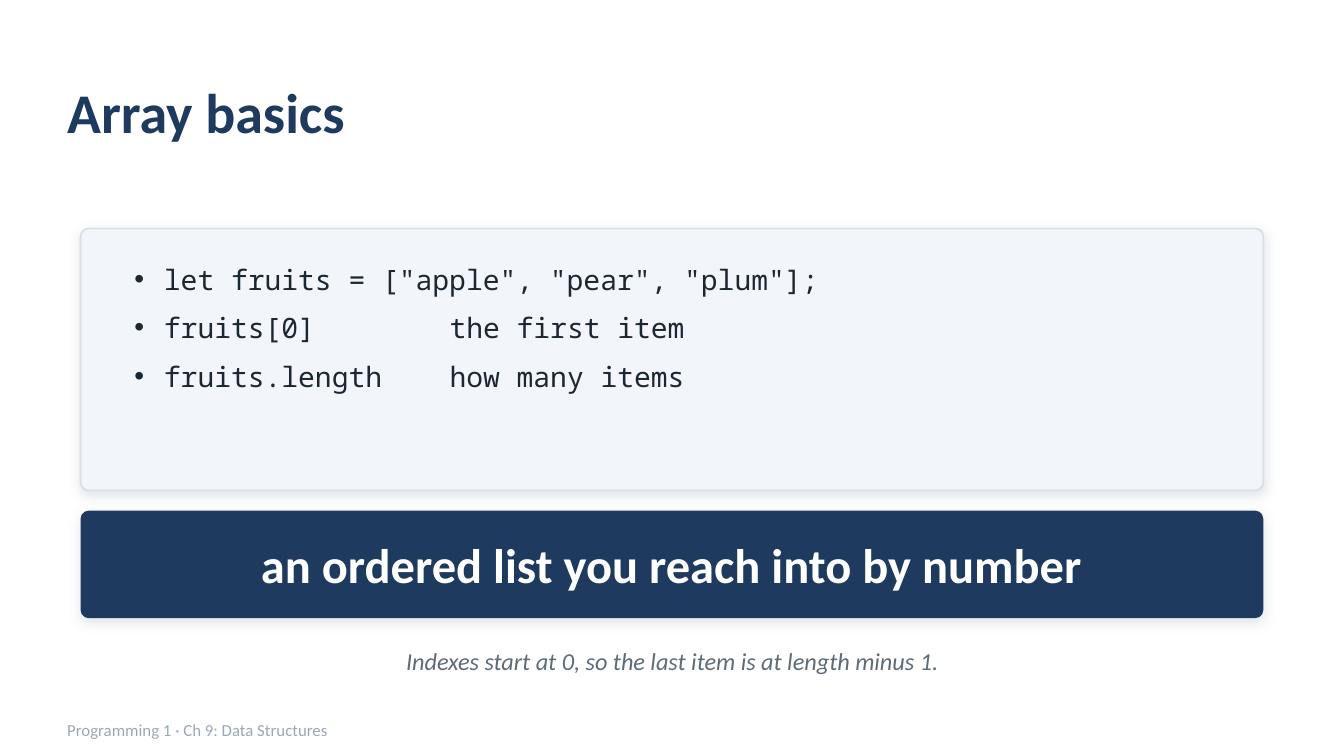
from lxml import etree
from pptx import Presentation
from pptx.dml.color import RGBColor
from pptx.enum.shapes import MSO_SHAPE
from pptx.enum.text import MSO_ANCHOR, MSO_AUTO_SIZE, PP_ALIGN
from pptx.oxml import parse_xml
from pptx.oxml.ns import nsdecls, qn
from pptx.util import Pt

ROUND_RECT = MSO_SHAPE.ROUNDED_RECTANGLE
LEFT, CENTER = PP_ALIGN.LEFT, PP_ALIGN.CENTER
TOP, MIDDLE = MSO_ANCHOR.TOP, MSO_ANCHOR.MIDDLE
NO_FIT = MSO_AUTO_SIZE.NONE

PX = 4572  # 200 px to the inch
COLORS = {
    "navy": "1F3A5F",
    "panel": "F2F5F9",
    "border": "D8E0E9",
    "code": "1B2733",
    "white": "FFFFFF",
    "note": "5E6B79",
    "muted": "9AA8B6",
}


def add_card(x, y, w, h, fill, radius):
    """Add a rounded card with a soft shadow below it."""
    sp = s.shapes.add_shape(ROUND_RECT, x * PX, y * PX, w * PX, h * PX)
    sp.adjustments[0] = radius / h
    sp.fill.solid()
    sp.fill.fore_color.rgb = RGBColor.from_string(COLORS[fill])
    sp.line.fill.background()
    sp.shadow.inherit = False
    sp._element.spPr.find(qn("a:effectLst")).append(parse_xml(
        f'<a:outerShdw {nsdecls("a")} blurRad="{Pt(6)}" dist="{Pt(2)}" '
        f'dir="5400000" algn="ctr" rotWithShape="0"><a:srgbClr val="{COLORS["muted"]}">'
        '<a:alpha val="28000"/></a:srgbClr></a:outerShdw>'))
    return sp


def set_text(sp, box, text, size, color, align=LEFT, font="Calibri", bold=False, italic=False):
    """Place a text shape and fill it with evenly formatted paragraphs."""
    sp.left, sp.top, sp.width, sp.height = [v * PX for v in box]
    tf = sp.text_frame
    tf.text = text
    tf.word_wrap = True
    tf.auto_size = NO_FIT
    tf.vertical_anchor = MIDDLE
    tf.margin_left = tf.margin_right = tf.margin_top = tf.margin_bottom = 0
    for p in tf.paragraphs:
        p.alignment = align
        p.space_before = Pt(0)
        for r in p.runs:
            r.font.name = font
            r.font.size = Pt(size)
            r.font.bold = bold
            r.font.italic = italic
            r.font.color.rgb = RGBColor.from_string(COLORS[color])
    return tf


prs = Presentation()
prs.slide_width, prs.slide_height = 2000 * PX, 1125 * PX
s = prs.slides.add_slide(prs.slide_layouts[1])
title, body = s.placeholders

# Cards go behind the placeholders
panel = add_card(120, 340, 1760, 390, "panel", radius=12)
panel.line.color.rgb = RGBColor.from_string(COLORS["border"])
panel.line.width = Pt(1)
banner = add_card(120, 760, 1760, 160, "navy", radius=12)
for i, card in enumerate((panel, banner)):
    s.shapes._spTree.insert(2 + i, card._element)

set_text(title, (100, 80, 1800, 170), "Array basics", 30, "navy", bold=True)

# Code list: bullets, with a tab stop for the explanations
code = """let fruits = ["apple", "pear", "plum"];
fruits[0]\tthe first item
fruits.length\thow many items"""
tf = set_text(body, (180, 380, 1640, 320), code, 15, "code", font="Noto Sans Mono")
tf.vertical_anchor = TOP
tf.margin_left = tf.margin_right = 20 * PX
tf.margin_top = tf.margin_bottom = 10 * PX
for p in tf.paragraphs:
    p.space_after = Pt(8)
    pPr = p._p.get_or_add_pPr()
    pPr.set("marL", str(44 * PX))
    pPr.set("indent", str(-44 * PX))
    etree.SubElement(pPr, qn("a:buChar"), char="•")
    tabs = etree.SubElement(pPr, qn("a:tabLst"))
    etree.SubElement(tabs, qn("a:tab"), pos=str(469 * PX), algn="l")

labels = [
    ((120, 766, 1760, 148), "an ordered list you reach into by number", 26, "white",
     {"align": CENTER, "bold": True}),
    ((120, 944, 1760, 80), "Indexes start at 0, so the last item is at length minus 1.", 13, "note",
     {"align": CENTER, "italic": True}),
    ((100, 1060, 1600, 52), "Programming 1 · Ch 9: Data Structures", 9, "muted", {}),
]
for box, text, size, color, style in labels:
    sp = s.shapes.add_textbox(0, 0, 0, 0)
    set_text(sp, box, text, size, color, **style)

prs.save("out.pptx")
